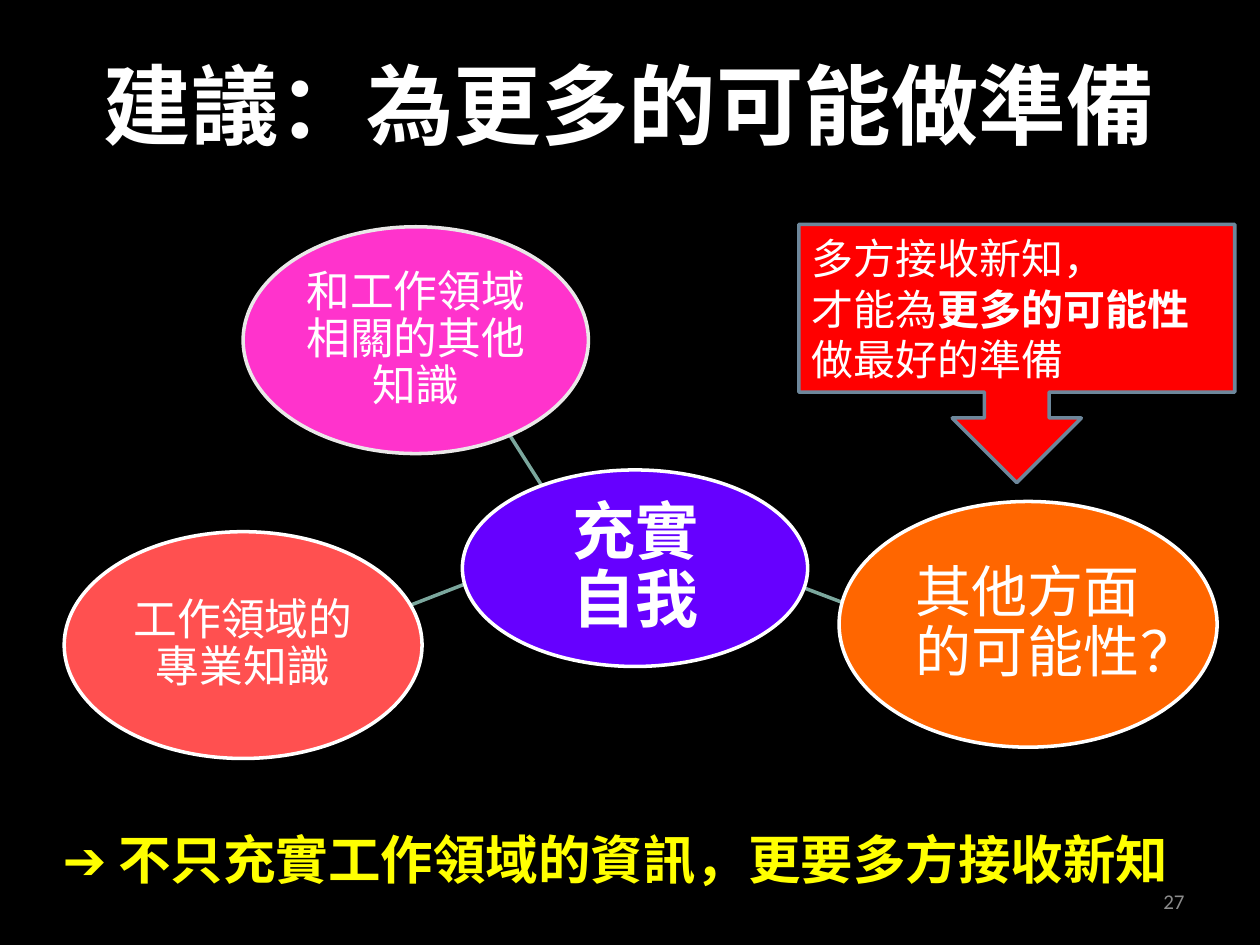
from lxml.etree import SubElement
from pptx import Presentation
from pptx.dml.color import RGBColor
from pptx.enum.shapes import MSO_CONNECTOR as Connector, MSO_SHAPE as Preset
from pptx.enum.text import MSO_ANCHOR as Anchor, MSO_AUTO_SIZE as AutoSize, PP_ALIGN as Align
from pptx.oxml.ns import qn
from pptx.util import Inches, Pt

COLORS = {
    "background": "000000", "text": "FFFFFF", "conclusion": "FFFF00", "number": "8C8C8C",
    "spoke": "7BA79D", "self": "6600FF", "related": "FF33CC", "other": "FF6600",
    "work": "FF5050", "rim": "FFFFFF", "pale rim": "EAE8E8",
    "callout": "FF0000", "callout rim": "6D879B",
}
CJK_FONT = "Noto Sans CJK SC"
CELL = 0.1  # inches: the slide is a grid of 100 columns by 75 rows


def grid(*cells):
    return [Inches(cell * CELL) for cell in cells]


def color(name):
    return RGBColor.from_string(COLORS[name])


class SlideBuilder:
    """Holds the style and the current slide."""

    def __init__(self, page):
        self.page = page
        page.background.fill.solid()
        page.background.fill.fore_color.rgb = color("background")

    def fill_text(self, shape, paragraphs, size, ink="text", bold=False,
                  align=Align.CENTER, font=CJK_FONT, spacing=None):
        """Each paragraph is a list of (text, bold) spans or a plain string."""
        frame = shape.text_frame
        frame.word_wrap = True
        frame.auto_size = AutoSize.NONE
        frame.vertical_anchor = Anchor.MIDDLE
        for index, spans in enumerate(paragraphs):
            para = frame.add_paragraph() if index else frame.paragraphs[0]
            para.alignment = align
            para.line_spacing = spacing
            if isinstance(spans, str):
                para.text = spans
            else:
                for text, _ in spans:
                    para.add_run().text = text
            for position, span in enumerate(para.runs):
                span.font.size = Pt(size)
                span.font.bold = bold if isinstance(spans, str) else spans[position][1]
                span.font.color.rgb = color(ink)
                span.font.name = font
                SubElement(span.font._element, qn("a:ea"), typeface=font)

    def title(self, area, text, size):
        box = self.page.shapes.title
        box.left, box.top, box.width, box.height = grid(*area)
        self.fill_text(box, [text], size, bold=True)

    def label(self, area, text, size, **style):
        box = self.page.shapes.add_textbox(*grid(*area))
        self.fill_text(box, [text], size, **style)

    def shape(self, preset, area, fill, rim):
        shape = self.page.shapes.add_shape(preset, *grid(*area))
        shape.shadow.inherit = False
        shape.fill.solid()
        shape.fill.fore_color.rgb = color(fill)
        shape.line.color.rgb = color(rim)
        shape.line.width = Pt(2)
        return shape

    def bubble(self, area, text, size, fill, rim="rim", bold=False):
        oval = self.shape(Preset.OVAL, area, fill, rim)
        frame = oval.text_frame
        frame.margin_left = frame.margin_right = frame.margin_top = frame.margin_bottom = 0
        self.fill_text(oval, [text], size, bold=bold, spacing=0.9)

    def callout(self, area, paragraphs, size):
        box = self.shape(Preset.DOWN_ARROW_CALLOUT, area, "callout", "callout rim")
        for index, share in enumerate((0.25, 0.25, 0.25, 0.65)):
            box.adjustments[index] = share
        self.fill_text(box, paragraphs, size, align=Align.LEFT)

    def spoke(self, start, end):
        line = self.page.shapes.add_connector(Connector.STRAIGHT, *grid(*start, *end))
        line.line.color.rgb = color("spoke")
        line.line.width = Pt(2)
        SubElement(line._element.spPr, qn("a:effectLst"))


def main():
    deck = Presentation()
    deck.slide_width, deck.slide_height = grid(100, 75)
    title_only = deck.slide_layouts[5]
    builder = SlideBuilder(deck.slides.add_slide(title_only))

    # Heading
    builder.title((5, 2.5, 89.9, 11.4), "建議：為更多的可能做準備", 50)

    # Spokes from the centre to the three kinds of knowledge
    builder.spoke((43.1, 38.7), (40.3, 34.3))
    builder.spoke((63.4, 46.5), (68.4, 48.4))
    builder.spoke((37.3, 46.2), (32.4, 48.1))

    # Bubbles
    builder.bubble((36.7, 37.3, 27.4, 15.6), "充實\v自我", 36, "self", bold=True)
    builder.bubble((19.3, 18, 27.4, 18), "和工作領域相關的其他知識", 25, "related", "pale rim")
    builder.bubble((66.6, 39.8, 30, 19.5), "其他方面的可能性？", 32, "other")
    builder.bubble((5.1, 42.2, 28.4, 18), "工作領域的專業知識", 25, "work")

    # Callout above the other possibilities
    builder.callout((63.4, 17.8, 34.6, 20.5), [
        "多方接收新知，",
        [("才能為", False), ("更多的可能性", True)],
        "做最好的準備",
    ], 24)

    # Conclusion and page number
    builder.label((2.8, 65.1, 92.1, 6.1), "➔ 不只充實工作領域的資訊，更要多方接收新知", 30,
                  ink="conclusion", bold=True)
    builder.label((71.7, 69.5, 23.3, 4), "27", 12, ink="number", align=Align.RIGHT, font="Calibri")

    deck.save("out.pptx")


if __name__ == "__main__":
    main()
